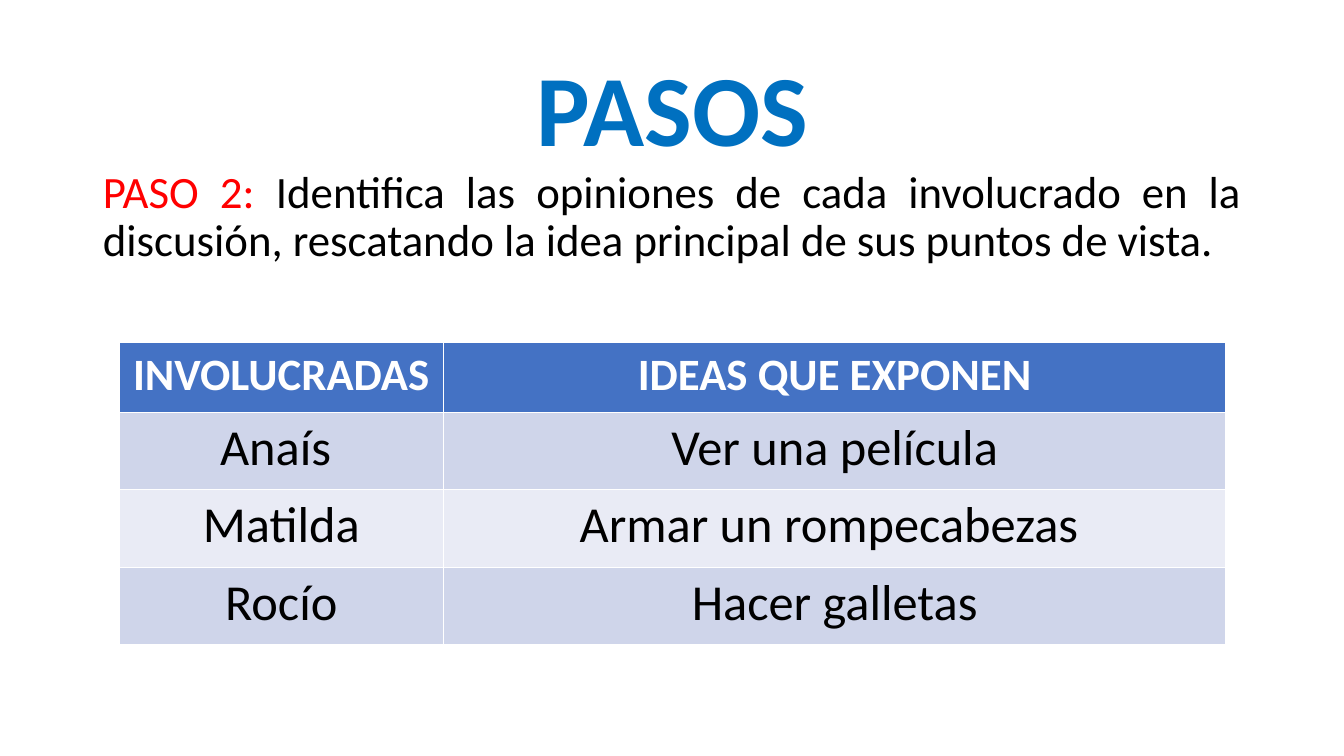
from pptx import Presentation
from pptx.dml.color import RGBColor
from pptx.enum.text import MSO_ANCHOR, MSO_AUTO_SIZE, PP_ALIGN
from pptx.oxml.xmlchemy import OxmlElement
from pptx.util import Pt

PX = 9144  # 100 px to the inch
FACE = "Calibri"
BLUE = RGBColor(0x00, 0x70, 0xC0)
RED = RGBColor(0xFF, 0x00, 0x00)
BLACK = RGBColor(0x00, 0x00, 0x00)
WHITE = RGBColor(0xFF, 0xFF, 0xFF)
HEAD = RGBColor(0x44, 0x72, 0xC4)
BANDS = [RGBColor(0xE9, 0xEB, 0xF5), RGBColor(0xCF, 0xD5, 0xEA)]


def place(shape, left, top, width, height):
    shape.left, shape.top = left * PX, top * PX
    shape.width, shape.height = width * PX, height * PX


def style(para, size, color, bold, align):
    para.alignment = align
    font = para.font
    font.name, font.size, font.bold = FACE, Pt(size), bold
    font.color.rgb = color


deck = Presentation()
deck.slide_width, deck.slide_height = 1333 * PX, 750 * PX
slide = deck.slides.add_slide(deck.slide_layouts[1])

# Title
title = slide.shapes.title
place(title, 92, 40, 1150, 145)
title.text_frame.text = "PASOS"
title.text_frame.auto_size = MSO_AUTO_SIZE.NONE
title.text_frame.vertical_anchor = MSO_ANCHOR.MIDDLE
para = title.text_frame.paragraphs[0]
style(para, 72, BLUE, True, PP_ALIGN.CENTER)
para.line_spacing = 0.9

# Step text, without a bullet
body = slide.placeholders[1]
place(body, 92, 163, 1150, 512)
body.text_frame.auto_size = MSO_AUTO_SIZE.NONE
para = body.text_frame.paragraphs[0]
style(para, 32, BLACK, False, PP_ALIGN.JUSTIFY)
para.line_spacing, para.space_before = 0.9, Pt(10)
props = para._p.get_or_add_pPr()
props.set("marL", "0")
props.set("indent", "0")
props.insert_element_before(OxmlElement("a:buNone"), "a:tabLst", "a:defRPr", "a:extLst")
step = para.add_run()
step.text = "PASO 2: "
step.font.color.rgb = RED
para.add_run().text = (
    "Identifica las opiniones de cada involucrado en la discusión, "
    "rescatando la idea principal de sus puntos de vista."
)

# Table of people and ideas
ROWS = [
    ("INVOLUCRADAS", "IDEAS QUE EXPONEN"),
    ("Anaís ", "Ver una película"),
    ("Matilda", "Armar un rompecabezas "),
    ("Rocío", "Hacer galletas"),
]
WIDTHS = [322, 776]
HEIGHTS = [69, 77, 77, 77]
frame = slide.shapes.add_table(
    len(ROWS), len(WIDTHS), 118 * PX, 340 * PX, sum(WIDTHS) * PX, sum(HEIGHTS) * PX
)
table = frame.table
for col, width in zip(table.columns, WIDTHS):
    col.width = width * PX
for r, texts in enumerate(ROWS):
    table.rows[r].height = HEIGHTS[r] * PX
    first = r == 0
    for c, text in enumerate(texts):
        cell = table.cell(r, c)
        cell.text = text
        cell.fill.solid()
        cell.fill.fore_color.rgb = HEAD if first else BANDS[r % 2]
        style(
            cell.text_frame.paragraphs[0],
            32 if first else 36,
            WHITE if first else BLACK,
            first,
            PP_ALIGN.CENTER,
        )

deck.save("out.pptx")
